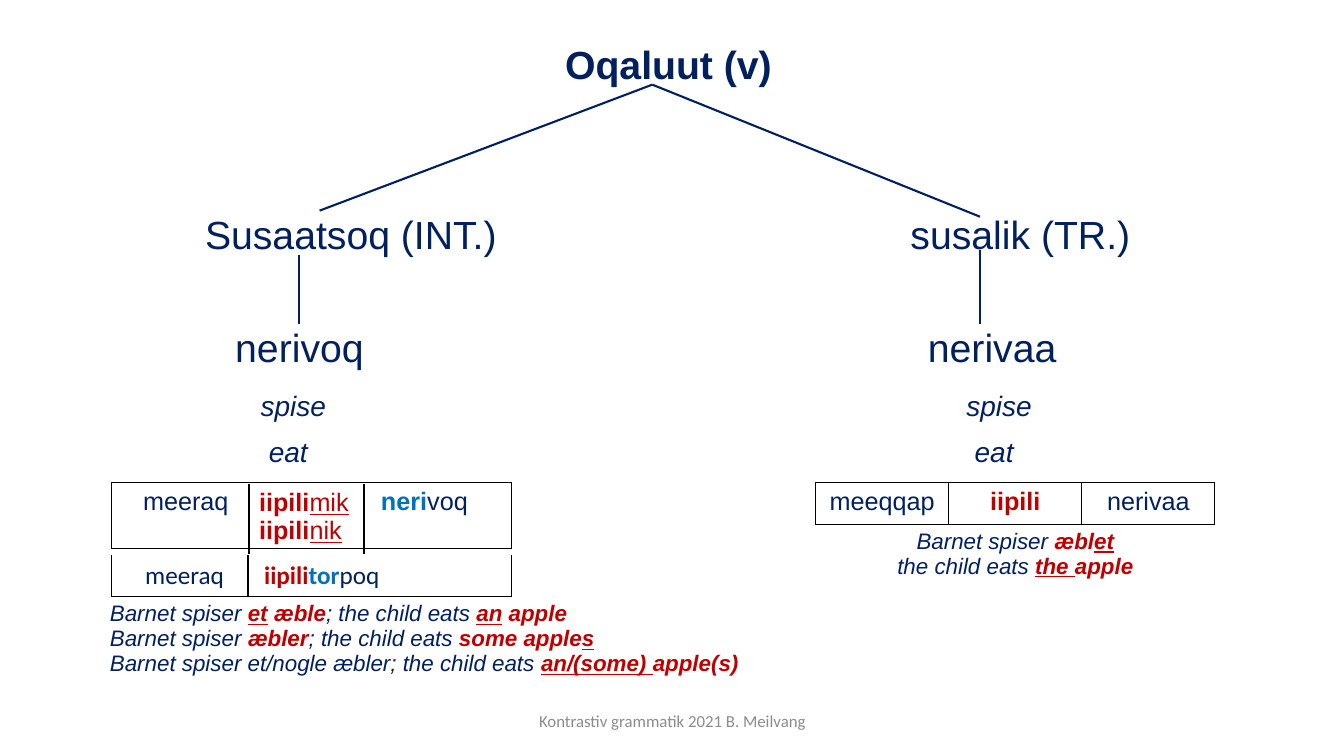
import pptx
import pptx.util
import pptx.dml.color
import pptx.enum.shapes
import pptx.enum.text
import pptx.oxml
import pptx.oxml.ns

Inches = pptx.util.Inches
Align = pptx.enum.text.PP_ALIGN
Anchor = pptx.enum.text.MSO_ANCHOR
COLORS = {"navy": "002060", "red": "C00000", "blue": "0070C0", "grey": "8C8C8C", "black": "000000"}
SIDES = "LRTB"


def color(name):
    return pptx.dml.color.RGBColor.from_string(COLORS[name])


def red(text, underline=False, bold=True):
    return text, {"tint": "red", "bold": bold, "underline": underline}


def blue(text):
    return text, {"tint": "blue", "bold": True}


def add_span(para, text, size=18, font="Arial", tint="navy", bold=False, italic=False, underline=False):
    span = para.add_run()
    span.text = text
    span.font.size = pptx.util.Pt(size)
    span.font.name = font
    span.font.color.rgb = color(tint)
    span.font.bold = bold
    span.font.italic = italic
    span.font.underline = underline


def write_lines(frame, lines, align=Align.LEFT, **style):
    for index, line in enumerate(lines):
        para = frame.paragraphs[0] if index == 0 else frame.add_paragraph()
        para.alignment = align
        for part in line:
            text, extra = (part, {}) if isinstance(part, str) else part
            add_span(para, text, **{**style, **extra})


def add_label(page, text, center, middle, width=3.4, height=0.46, **style):
    box = page.shapes.add_textbox(Inches(center - width / 2), Inches(middle - height / 2),
                                  Inches(width), Inches(height))
    frame = box.text_frame
    frame.word_wrap = True
    frame.margin_top = frame.margin_bottom = 0
    frame.vertical_anchor = Anchor.MIDDLE
    write_lines(frame, [[text]], align=Align.CENTER, **style)
    return box


def add_branch(page, start, end):
    points = [Inches(value) for value in (*start, *end)]
    branch = page.shapes.add_connector(pptx.enum.shapes.MSO_CONNECTOR.STRAIGHT, *points)
    branch.line.color.rgb = color("navy")
    branch.line.width = pptx.util.Pt(1.5)
    branch._element.spPr.append(pptx.oxml.parse_xml(
        f'<a:effectLst {pptx.oxml.ns.nsdecls("a")}/>'))
    return branch


def set_borders(cell, borders):
    properties = cell._tc.get_or_add_tcPr()
    for index, side in enumerate(SIDES):
        paint = (f'<a:solidFill><a:srgbClr val="{COLORS["black"]}"/></a:solidFill>'
                 if side in borders else "<a:noFill/>")
        properties.insert(index, pptx.oxml.parse_xml(
            f'<a:ln{side} {pptx.oxml.ns.nsdecls("a")} w="12700">{paint}</a:ln{side}>'))


def add_grid(page, left, top, widths, heights):
    table = page.shapes.add_table(len(heights), len(widths), Inches(left), Inches(top),
                                  Inches(sum(widths)), Inches(sum(heights))).table
    table.first_row = False
    table.horz_banding = False
    for column, width in zip(table.columns, widths):
        column.width = Inches(width)
    for row, height in zip(table.rows, heights):
        row.height = Inches(height)
    return table


def fill_cell(cell, lines, borders="", indent=0.1, **style):
    cell.fill.background()
    set_borders(cell, borders)
    cell.margin_left = Inches(indent)
    write_lines(cell.text_frame, lines, **style)


def add_tree(page):
    add_label(page, "Oqaluut (v)", 6.63, 0.63, size=28, bold=True)
    add_label(page, "Susaatsoq (INT.)", 3.48, 2.32, size=28)
    add_label(page, "susalik (TR.)", 10.12, 2.32, size=28)
    intransitive = add_label(page, "nerivoq", 2.97, 3.44, size=28)
    add_label(page, "nerivaa", 9.84, 3.44, size=28)
    for word, center, middle in (("spise", 2.91, 4.02), ("eat", 2.86, 4.48)):
        for shift in (0, 7):
            add_label(page, word, center + shift, middle, width=1.5, size=20, italic=True)
    add_branch(page, (6.47, 0.84), (3.17, 2.09))
    add_branch(page, (6.47, 0.84), (9.72, 2.15))
    add_branch(page, (2.97, 2.53), (2.97, 3.21)).end_connect(intransitive, 0)
    add_branch(page, (9.72, 2.48), (9.72, 3.21))


def add_transitive_example(page):
    table = add_grid(page, 8.09, 4.79, [1.32] * 3, [0.41, 0.64])
    for column, word in enumerate(("meeqqap", red("iipili"), "nerivaa")):
        fill_cell(table.cell(0, column), [[word]], SIDES, align=Align.CENTER)
    table.cell(1, 0).merge(table.cell(1, 2))
    translation = [["Barnet spiser ", red("æbl"), red("et", True)],
                   ["the child eats ", red("the ", True), red("apple")]]
    for column, lines in enumerate((translation, [], [])):
        fill_cell(table.cell(1, column), lines, "T", align=Align.CENTER, size=16, italic=True)


def add_intransitive_examples(page):
    outer = add_grid(page, 1.11, 4.79, [1.98, 1.98], [0.65])
    fill_cell(outer.cell(0, 0), [["meeraq"]], "LTB", indent=0.31)
    fill_cell(outer.cell(0, 1), [[blue("neri"), "voq"]], "RTB", indent=0.36, align=Align.CENTER)

    objects = add_grid(page, 2.47, 4.8, [1.14], [0.69])
    fill_cell(objects.cell(0, 0), [[red("iipili"), red(ending, True, False)] for ending in ("mik", "nik")], "LR")

    compound = add_grid(page, 1.11, 5.51, [1.35, 2.61], [0.41])
    fill_cell(compound.cell(0, 0), [["meeraq"]], "LRB", indent=0.33, font="Calibri")
    fill_cell(compound.cell(0, 1), [[red("iipili"), blue("tor"), "poq"]], "LRB",
              indent=0.16, font="Calibri")

    translations = add_grid(page, 0.99, 5.92, [6.74], [1.16])
    fill_cell(translations.cell(0, 0), [
        ["Barnet spiser ", red("et", True), red(" æble"), "; the child eats ", red("an", True), red(" apple")],
        ["Barnet spiser ", red("æbler"), "; the child eats ", red("some apple"), red("s", True)],
        ["Barnet spiser et/nogle æbler; the child eats ", red("an/(some) ", True), red("apple(s)")],
    ], size=16, italic=True)


def main():
    deck = pptx.Presentation()
    deck.slide_width = Inches(13.33)
    deck.slide_height = Inches(7.5)
    page = deck.slides.add_slide(deck.slide_layouts[6])
    add_tree(page)
    add_transitive_example(page)
    add_intransitive_examples(page)
    add_label(page, "Kontrastiv grammatik 2021 B. Meilvang", 6.67, 7.15,
              width=4.5, height=0.4, size=12, font="Calibri", tint="grey")
    deck.save("out.pptx")


if __name__ == "__main__":
    main()
